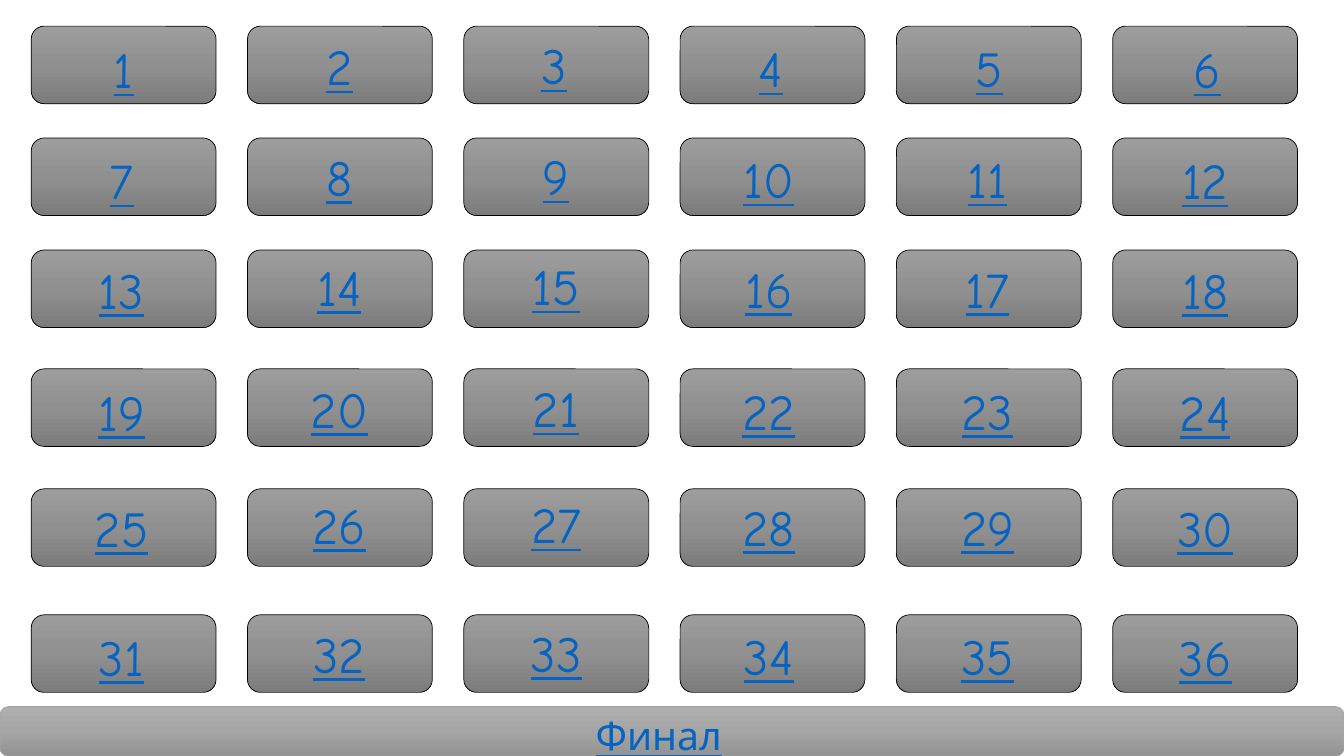
from copy import deepcopy
from dataclasses import dataclass
from itertools import product

from pptx import Presentation
from pptx.dml.color import RGBColor as RGB
from pptx.enum.shapes import MSO_SHAPE as Shape
from pptx.enum.text import MSO_AUTO_SIZE as Fit, PP_ALIGN as Align
from pptx.oxml.ns import qn
from pptx.slide import Slide
from pptx.util import Pt


@dataclass(frozen=True)
class Theme:
    font: str = "Comic Neue"
    link: str = "0563C1"
    dark: tuple = ("9D9D9D", "909090", "7C7C7C")
    light: tuple = ("AFAFAF", "A5A5A5", "939393")
    edge: str = "000000"
    rim: str = "A5A5A5"
    large: float = 36
    small: float = 28
    line: float = 0.5


@dataclass(frozen=True)
class Box:
    left: float
    top: float
    width: float
    height: float

    def place(self) -> tuple:
        return Pt(self.left), Pt(self.top), Pt(self.width), Pt(self.height)


@dataclass(frozen=True)
class Panel:
    box: Box
    shades: tuple
    edge: str


@dataclass(frozen=True)
class Label:
    box: Box
    text: str
    size: float


THEME = Theme()
WIDE, HIGH = 960, 540

# Card grid: equal columns, rows spaced by hand
COLS = 6
LEFT, PITCH = 22.3, 154.5
CARD_W, CARD_H = 132, 55.4
ROWS = (18.7, 98.6, 178.6, 263.5, 349.2, 439.2)

# Number grid: the first row sits slightly apart from the rest
NUM_H = 50.9
NUM_X = (20.9, 176.4, 331.2, 483.1, 639.4, 794.9)
TOP_X = (22.3, 176.4, 329.8, 484.6, 640.8, 796.3)
NUM_Y = (23.8, 103, 181.4, 268.6, 351.4, 443.5)
LIFT = (0, 2.2, 2.7, 0.7, 0.7, 0)


def draw_panel(slide: Slide, panel: Panel) -> None:
    shape = slide.shapes.add_shape(Shape.ROUNDED_RECTANGLE, *panel.box.place())
    shape.shadow.inherit = False
    shape.line.color.rgb = RGB.from_string(panel.edge)
    shape.line.width = Pt(THEME.line)
    shape.fill.gradient()
    shape.fill.gradient_angle = 270
    # A third gradient stop
    stops = shape._element.spPr.find(qn("a:gradFill")).find(qn("a:gsLst"))
    stops.insert(1, deepcopy(stops[0]))
    for i, (stop, shade) in enumerate(zip(shape.fill.gradient_stops, panel.shades)):
        stop.position = i / 2
        stop.color.rgb = RGB.from_string(shade)


def draw_label(slide: Slide, label: Label) -> None:
    frame = slide.shapes.add_textbox(*label.box.place()).text_frame
    frame.word_wrap = True
    frame.auto_size = Fit.SHAPE_TO_FIT_TEXT
    frame.text = label.text
    para = frame.paragraphs[0]
    para.alignment = Align.CENTER
    font = para.runs[0].font
    font.name = THEME.font
    font.size = Pt(label.size)
    font.underline = True
    font.color.rgb = RGB.from_string(THEME.link)


def main() -> None:
    deck = Presentation()
    deck.slide_width, deck.slide_height = Pt(WIDE), Pt(HIGH)
    slide = deck.slides.add_slide(deck.slide_layouts[6])

    # Cards
    for top, col in product(ROWS, range(COLS)):
        box = Box(LEFT + col * PITCH, top, CARD_W, CARD_H)
        draw_panel(slide, Panel(box, THEME.dark, THEME.edge))

    # Numbers
    for row, col in product(range(len(NUM_Y)), range(COLS)):
        left = (NUM_X if row else TOP_X)[col]
        box = Box(left, NUM_Y[row] - LIFT[col], CARD_W, NUM_H)
        draw_label(slide, Label(box, str(row * COLS + col + 1), THEME.large))

    # Final bar
    draw_panel(slide, Panel(Box(0, 504.7, WIDE, 35.3), THEME.light, THEME.rim))
    draw_label(slide, Label(Box(360.7, 504.7, 219.6, 41.2), "Финал", THEME.small))

    deck.save("out.pptx")


if __name__ == "__main__":
    main()
